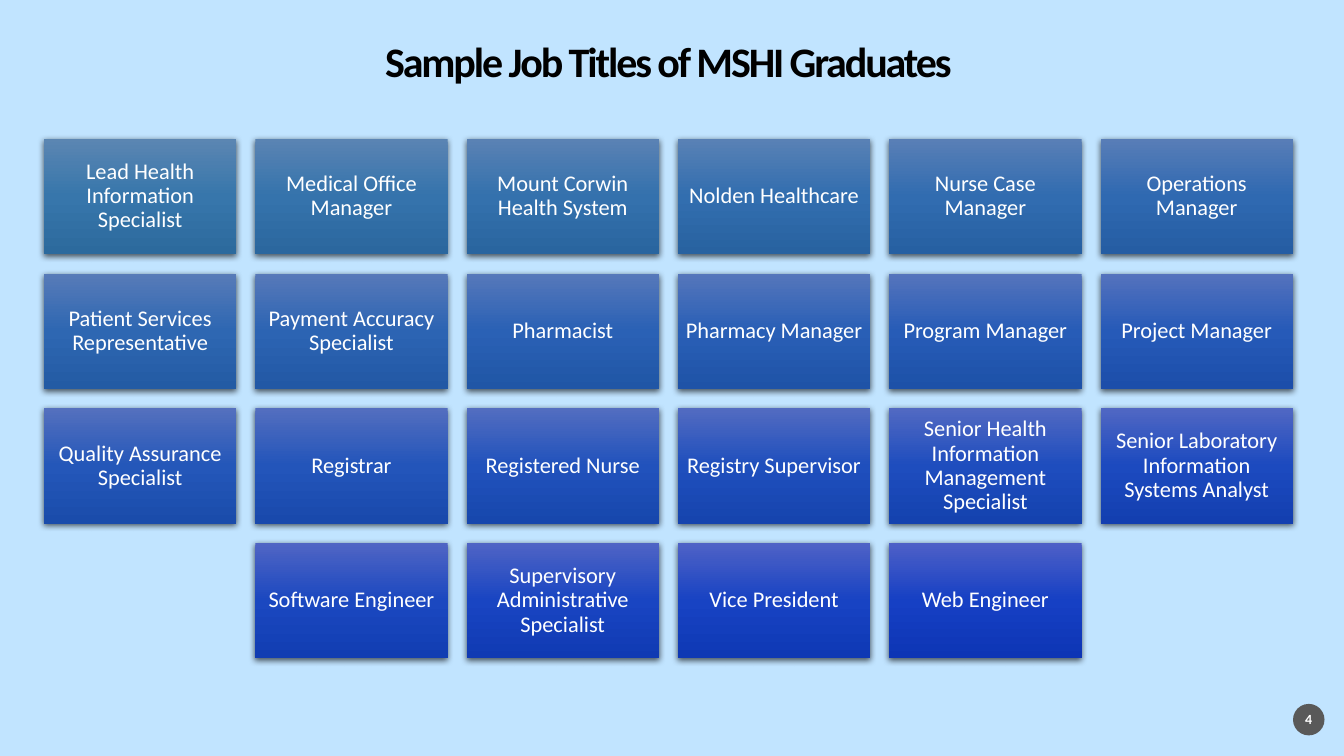
import copy

import pptx
import pptx.dml.color
import pptx.enum.shapes
import pptx.enum.text
import pptx.oxml
import pptx.oxml.ns
import pptx.util

Pt = pptx.util.Pt
RGBColor = pptx.dml.color.RGBColor
SHAPE = pptx.enum.shapes.MSO_SHAPE
FONT = "Calibri"

SKY = RGBColor(0xC1, 0xE4, 0xFF)
BLACK = RGBColor(0, 0, 0)
WHITE = RGBColor(0xFF, 0xFF, 0xFF)
GREY = RGBColor(0x59, 0x59, 0x59)
# Top, middle and bottom colours of the first and the last tile
FIRST = [RGBColor(0x5B, 0x86, 0xB2), RGBColor(0x37, 0x76, 0xAB), RGBColor(0x2C, 0x6A, 0x9D)]
LAST = [RGBColor(0x4E, 0x60, 0xC7), RGBColor(0x16, 0x40, 0xC4), RGBColor(0x0D, 0x35, 0xB5)]

JOBS = [
    ["Lead Health Information Specialist", "Medical Office Manager",
     "Mount Corwin Health System", "Nolden Healthcare",
     "Nurse Case Manager", "Operations Manager"],
    ["Patient Services Representative", "Payment Accuracy Specialist",
     "Pharmacist", "Pharmacy Manager", "Program Manager", "Project Manager"],
    ["Quality Assurance Specialist", "Registrar", "Registered Nurse",
     "Registry Supervisor", "Senior Health Information Management Specialist",
     "Senior Laboratory Information Systems Analyst"],
    ["Software Engineer", "Supervisory Administrative Specialist",
     "Vice President", "Web Engineer"],
]
LEFT, TOP = 31.4, 99.2
WIDTH, HEIGHT = 137.4, 82.4
STEP_X, STEP_Y = 150.94, 96.2
COLS = 6

SHADOW = (
    '<a:outerShdw xmlns:a="http://schemas.openxmlformats.org/drawingml/2006/main" '
    f'blurRad="{Pt(4.5)}" dist="{Pt(1.5)}" dir="5400000" algn="ctr" rotWithShape="0">'
    '<a:srgbClr val="000000"><a:alpha val="63000"/></a:srgbClr></a:outerShdw>'
)


def write(shape, text, size, color, inset=0, bold=False):
    """Put one centred paragraph in the shape and return it."""
    frame = shape.text_frame
    frame.word_wrap = True
    frame.auto_size = pptx.enum.text.MSO_AUTO_SIZE.NONE
    frame.vertical_anchor = pptx.enum.text.MSO_ANCHOR.MIDDLE
    frame.margin_left = frame.margin_right = Pt(inset)
    frame.margin_top = frame.margin_bottom = Pt(inset)
    para = frame.paragraphs[0]
    para.text = text
    para.alignment = pptx.enum.text.PP_ALIGN.CENTER
    para.line_spacing = 0.9
    para.font.name = FONT
    para.font.size = Pt(size)
    para.font.bold = bold
    para.font.color.rgb = color
    return para


def shade(shape, colors):
    """Fill the shape from top to bottom with three colours."""
    shape.fill.gradient()
    shape.fill.gradient_angle = 270
    stops = shape.element.spPr.find(".//" + pptx.oxml.ns.qn("a:gsLst"))
    stops.append(copy.deepcopy(stops[-1]))
    for stop, color, place in zip(shape.fill.gradient_stops, colors, (0, 0.5, 1)):
        stop.color.rgb = color
        stop.position = place


deck = pptx.Presentation()
deck.slide_width, deck.slide_height = Pt(960), Pt(540)
slide = deck.slides.add_slide(deck.slide_layouts[5])
slide.background.fill.solid()
slide.background.fill.fore_color.rgb = SKY

title = slide.shapes.title
title.left, title.top = Pt(LEFT), Pt(28.8)
title.width, title.height = Pt(892), Pt(34)
para = write(title, "Sample Job Titles of MSHI Graduates", 30, BLACK, bold=True)
para.runs[0].font.name = FONT
para.runs[0].font.element.set("spc", "-150") if hasattr(para.runs[0].font, "element") else \
    para.runs[0]._r.get_or_add_rPr().set("spc", "-150")

badge = slide.shapes.add_shape(SHAPE.OVAL, Pt(923.6), Pt(502.8), Pt(22.5), Pt(22.5))
badge.shadow.inherit = False
badge.fill.solid()
badge.fill.fore_color.rgb = GREY
badge.line.fill.background()
write(badge, "4", 10, WHITE, bold=True)

total = sum(len(row) for row in JOBS)
count = 0
for line, row in enumerate(JOBS):
    start = LEFT + (COLS - len(row)) / 2 * STEP_X
    for col, job in enumerate(row):
        tile = slide.shapes.add_shape(
            SHAPE.RECTANGLE, Pt(start + col * STEP_X), Pt(TOP + line * STEP_Y),
            Pt(WIDTH), Pt(HEIGHT))
        part = count / (total - 1)
        shade(tile, [
            RGBColor(*(round(a + (b - a) * part) for a, b in zip(old, new)))
            for old, new in zip(FIRST, LAST)])
        tile.line.fill.background()
        tile.shadow.inherit = False
        glow = tile.element.spPr.find(pptx.oxml.ns.qn("a:effectLst"))
        glow.append(pptx.oxml.parse_xml(SHADOW))
        write(tile, job, 16, WHITE, inset=4.8)
        count += 1

deck.save("out.pptx")
